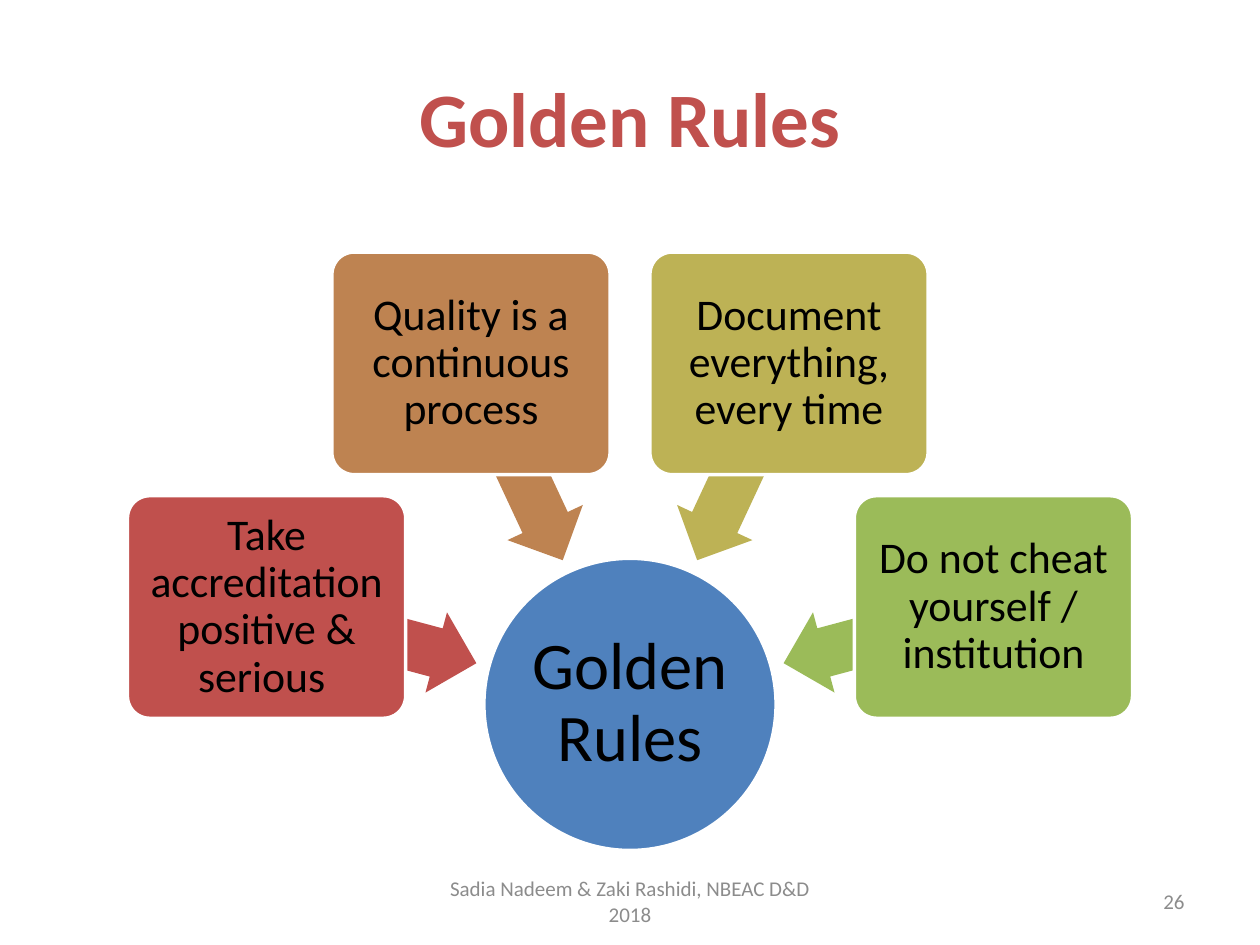
import math

from pptx import Presentation
from pptx.dml.color import RGBColor
from pptx.enum import shapes, text
from pptx.util import Pt

# Content
TITLE = "Golden Rules"
HUB = "Golden Rules"
RULES = [  # wording, colour, direction from the hub in degrees
    ("Take accreditation positive & serious ", "C0504D", 195),
    ("Quality is a continuous process", "BE8351", 245),
    ("Document everything, every time", "BDB255", 295),
    ("Do not cheat yourself / institution", "9BBB59", 345),
]
FOOTER = "Sadia Nadeem & Zaki Rashidi, NBEAC D&D 2018"
PAGE = "26"

THEME = {
    "font": "Calibri",
    "title": "C0504D", "hub": "4F81BD", "ink": "000000",
    "muted": "8C8C8C", "edge": "FFFFFF",
    "title_size": 44, "hub_size": 38, "card_size": 25, "footer_size": 12,
}

# Layout in points
HUB_CENTRE = (360, 402.5)
HUB_SIZE = (167, 167)
CARD_SIZE = (159, 127.2)
ARROW_SIZE = (124.6, 47.5)
CARD_RADIUS, ARROW_RADIUS = 215, 153.2


def write(shape, wording, size, colour, align=text.PP_ALIGN.CENTER,
          bold=False, margin=None, spacing=None):
    frame = shape.text_frame
    frame.word_wrap = True
    frame.auto_size = text.MSO_AUTO_SIZE.NONE
    frame.vertical_anchor = text.MSO_ANCHOR.MIDDLE
    if margin is not None:
        frame.margin_left = frame.margin_right = Pt(margin)
        frame.margin_top = frame.margin_bottom = Pt(margin)
    paragraph = frame.paragraphs[0]
    paragraph.alignment = align
    if spacing:
        paragraph.line_spacing = spacing
    run = paragraph.add_run()
    run.text = wording
    run.font.name = THEME["font"]
    run.font.size = Pt(size)
    run.font.bold = bold
    run.font.color.rgb = RGBColor.from_string(colour)


def add_centred(slide, kind, centre, size, fill, edge=None):
    (x, y), (width, height) = centre, size
    shape = slide.shapes.add_shape(kind, Pt(x - width / 2), Pt(y - height / 2),
                                   Pt(width), Pt(height))
    shape.shadow.inherit = False
    shape.fill.solid()
    shape.fill.fore_color.rgb = RGBColor.from_string(fill)
    if edge:
        shape.line.color.rgb = RGBColor.from_string(edge)
        shape.line.width = Pt(2)
    else:
        shape.line.fill.background()
    return shape


def around_hub(radius, angle):
    turn = math.radians(angle)
    return (HUB_CENTRE[0] + radius * math.cos(turn),
            HUB_CENTRE[1] + radius * math.sin(turn))


def main():
    presentation = Presentation()
    presentation.slide_width, presentation.slide_height = Pt(720), Pt(540)
    slide = presentation.slides.add_slide(presentation.slide_layouts[5])
    kinds = shapes.MSO_SHAPE

    # Title
    title = slide.shapes.title
    title.left, title.top, title.width, title.height = Pt(36), Pt(21.6), Pt(648), Pt(90)
    write(title, TITLE, THEME["title_size"], THEME["title"], bold=True)

    # Hub
    hub = add_centred(slide, kinds.OVAL, HUB_CENTRE, HUB_SIZE, THEME["hub"], THEME["edge"])
    write(hub, HUB, THEME["hub_size"], THEME["ink"], margin=2.4, spacing=0.9)

    # Rules, each with an arrow towards the hub
    for wording, colour, angle in RULES:
        arrow = add_centred(slide, kinds.LEFT_ARROW, around_hub(ARROW_RADIUS, angle),
                            ARROW_SIZE, colour)
        arrow.adjustments[0], arrow.adjustments[1] = 0.6, 0.5
        arrow.rotation = angle
        card = add_centred(slide, kinds.ROUNDED_RECTANGLE, around_hub(CARD_RADIUS, angle),
                           CARD_SIZE, colour, THEME["edge"])
        card.adjustments[0] = 0.1
        write(card, wording, THEME["card_size"], THEME["ink"], margin=3.75, spacing=0.9)

    # Footer and page number
    for wording, left, width, align in (
        (PAGE, 516, 168, text.PP_ALIGN.RIGHT),
        (FOOTER, 246, 228, text.PP_ALIGN.CENTER),
    ):
        box = slide.shapes.add_textbox(Pt(left), Pt(500.5), Pt(width), Pt(28.8))
        write(box, wording, THEME["footer_size"], THEME["muted"], align=align)

    presentation.save("out.pptx")


if __name__ == "__main__":
    main()
